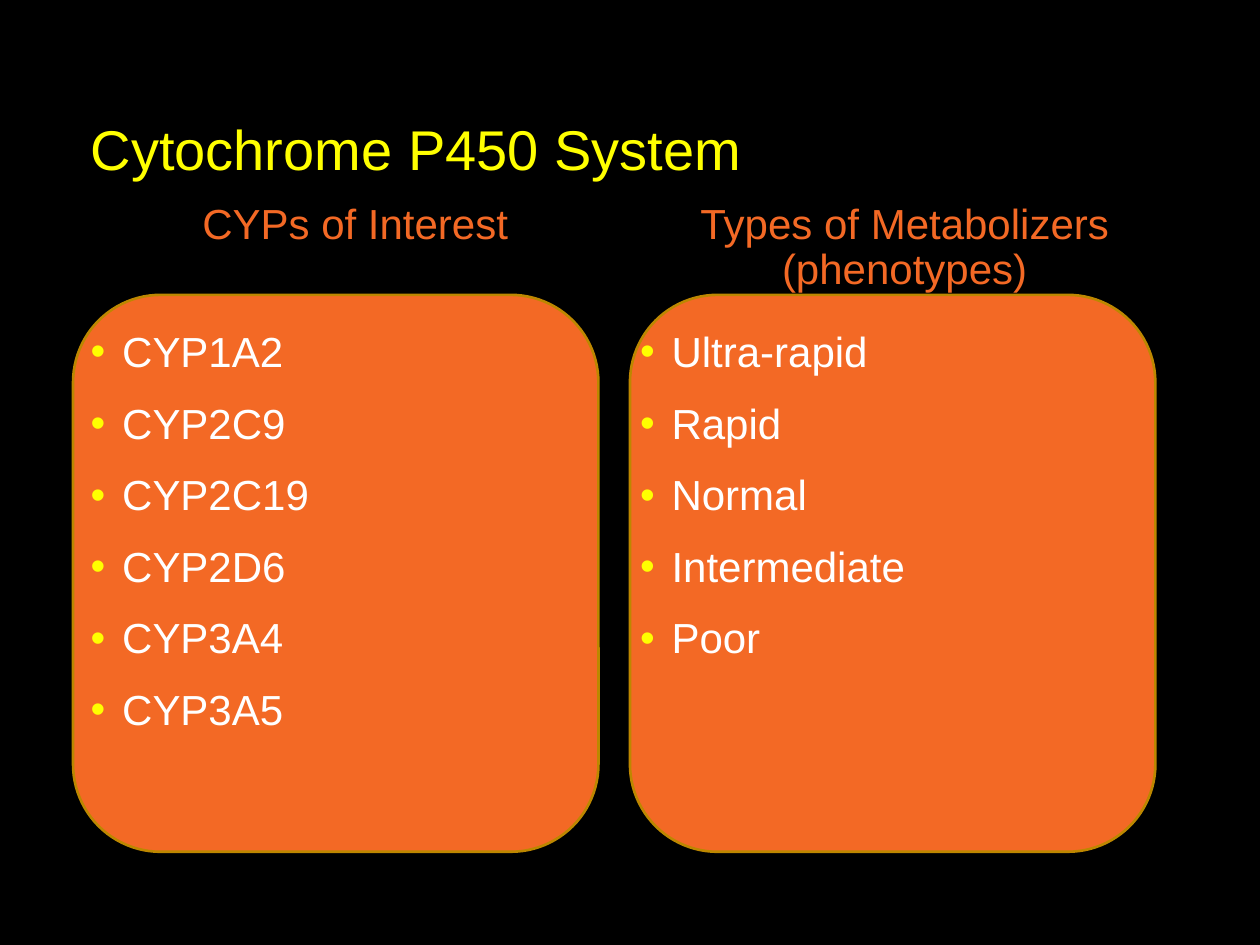
import pptx
import pptx.util
import pptx.dml.color
import pptx.enum.shapes
import pptx.enum.text
import pptx.oxml
import pptx.oxml.ns
from dataclasses import dataclass

Inches, Pt = pptx.util.Inches, pptx.util.Pt
Align, Anchor = pptx.enum.text.PP_ALIGN, pptx.enum.text.MSO_ANCHOR


@dataclass(frozen=True)
class Theme:
    font: str = "Arial"
    back: str = "000000"
    title: str = "FFFF00"
    panel: str = "F36925"
    edge: str = "BD8700"
    text: str = "FFFFFF"
    large: int = 32
    body: int = 24


THEME = Theme()


def color(code):
    return pptx.dml.color.RGBColor.from_string(code)


def add_text(slide, box, lines, size, tint, anchor=Anchor.TOP,
             align=Align.LEFT, inset=0.05, bullet=False):
    """Place one paragraph per line in the box."""
    frame = slide.shapes.add_textbox(*map(Inches, box)).text_frame
    frame.word_wrap = True
    frame.vertical_anchor = anchor
    frame.margin_left = frame.margin_right = 0
    frame.margin_top, frame.margin_bottom = Inches(inset), Inches(0.05)
    for i, line in enumerate(lines):
        para = frame.paragraphs[0] if i == 0 else frame.add_paragraph()
        para.text = line
        para.alignment = align
        para.line_spacing = 0.9
        if i:
            para.space_before = Pt(15)
        if bullet:
            add_bullet(para)
        para.font.name, para.font.size = THEME.font, Pt(size)
        para.font.color.rgb = color(tint)


def add_bullet(para):
    props = para._p.get_or_add_pPr()
    indent = Inches(0.25)
    props.set("marL", str(indent))
    props.set("indent", str(-indent))
    space = pptx.oxml.ns.nsdecls("a")
    for part in (
        f'<a:buClr {space}><a:srgbClr val="{THEME.title}"/></a:buClr>',
        f'<a:buFont {space} typeface="{THEME.font}"/>',
        f'<a:buChar {space} char="•"/>',
    ):
        props.append(pptx.oxml.parse_xml(part))


def add_panel(slide, box):
    panel = slide.shapes.add_shape(
        pptx.enum.shapes.MSO_SHAPE.ROUNDED_RECTANGLE, *map(Inches, box))
    panel.shadow.inherit = False
    panel.fill.solid()
    panel.fill.fore_color.rgb = color(THEME.panel)
    panel.line.color.rgb = color(THEME.edge)
    panel.line.width = Pt(1.5)


def add_column(slide, box, shift, head, items):
    """Heading above a rounded panel with a bullet list."""
    left, top, width, height = box
    rise = 0.88  # height of the heading
    # Heading
    add_text(slide, (left, top, width, rise), [head], THEME.body,
             THEME.panel, align=Align.CENTER, inset=0.11)
    # Panel, set a little to the left of the text
    add_panel(slide, (left - shift, top + rise - 0.04, 4.17, 4.42))
    # List
    add_text(slide, (left, top + rise, width, height - rise), items,
             THEME.body, THEME.text, inset=0.25, bullet=True)


def main():
    deck = pptx.Presentation()
    deck.slide_width, deck.slide_height = Inches(10), Inches(7.5)
    slide = deck.slides.add_slide(deck.slide_layouts[6])
    slide.background.fill.solid()
    slide.background.fill.fore_color.rgb = color(THEME.back)

    # Grid: two columns between equal margins
    edge, top, width, height = 0.72, 1.5, 4.2, 5.24
    span = 10 - 2 * edge
    add_text(slide, (edge, 0, span, top), ["Cytochrome P450 System"],
             THEME.large, THEME.title, anchor=Anchor.BOTTOM)
    columns = (
        (0.14, "CYPs of Interest",
         ["CYP1A2", "CYP2C9", "CYP2C19", "CYP2D6", "CYP3A4", "CYP3A5"]),
        (0.08, "Types of Metabolizers (phenotypes)",
         ["Ultra-rapid", "Rapid", "Normal", "Intermediate", "Poor"]),
    )
    for i, (shift, head, items) in enumerate(columns):
        left = edge + i * (span - width)
        add_column(slide, (left, top, width, height), shift, head, items)

    deck.save("out.pptx")


if __name__ == "__main__":
    main()
